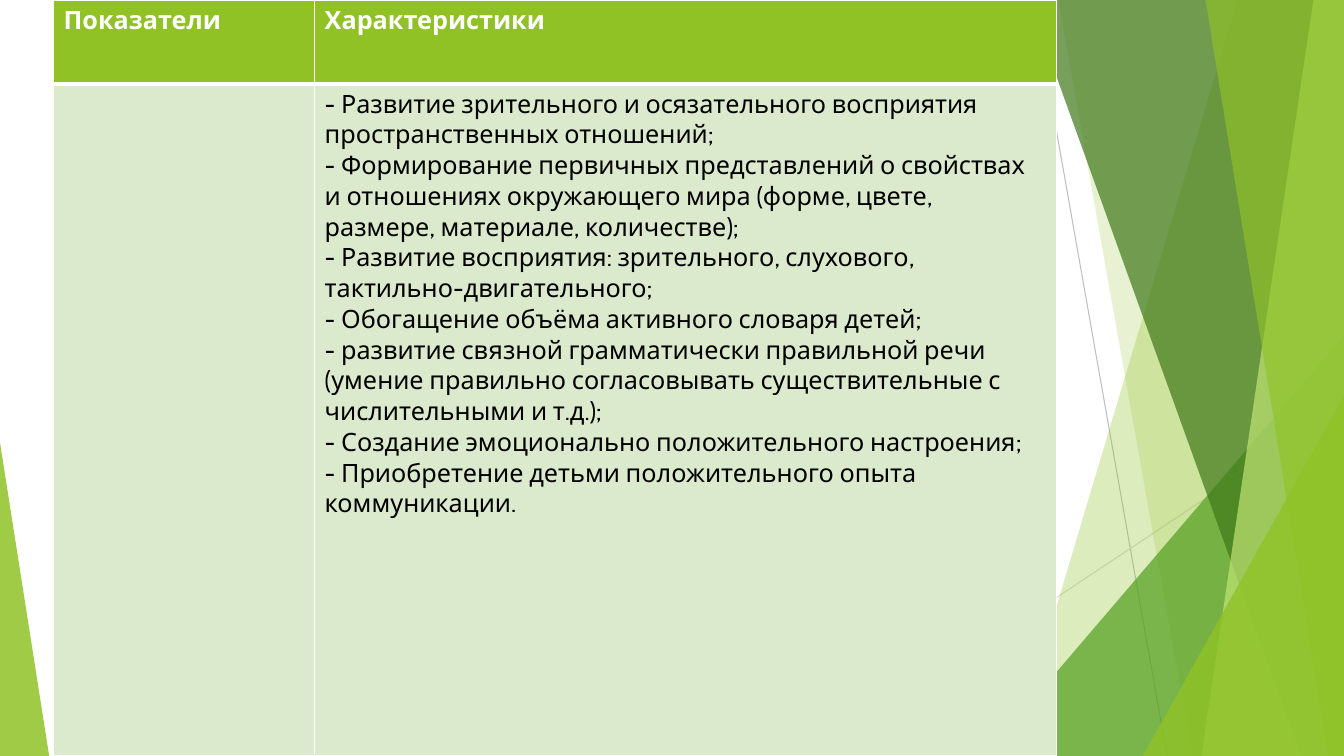
from lxml import etree
from pptx import Presentation
from pptx.dml.color import RGBColor
from pptx.enum.shapes import MSO_CONNECTOR, MSO_SHAPE
from pptx.oxml.ns import qn
from pptx.util import Cm, Pt

HEADERS = ["Показатели", "Характеристики"]
CHARACTERISTICS = [
    "- Развитие зрительного и осязательного восприятия пространственных отношений;",
    "- Формирование первичных представлений о свойствах и отношениях окружающего мира (форме, цвете, размере, материале, количестве);",
    "- Развитие восприятия: зрительного, слухового, тактильно-двигательного;",
    "- Обогащение объёма активного словаря детей;",
    "- развитие связной грамматически правильной речи (умение правильно согласовывать существительные с числительными и т.д.);",
    "- Создание эмоционально положительного настроения;",
    "- Приобретение детьми положительного опыта коммуникации.",
]

STRAIGHT = MSO_CONNECTOR.STRAIGHT
TRIANGLE = MSO_SHAPE.ISOSCELES_TRIANGLE
FONT = "Cabin"
WHITE = RGBColor(0xFF, 0xFF, 0xFF)
BLACK = RGBColor(0, 0, 0)
LIME = RGBColor(0x90, 0xC2, 0x26)
PALE_LIME = RGBColor(0xC0, 0xE4, 0x74)
GREEN = RGBColor(0x54, 0xA0, 0x21)
DARK_GREEN = RGBColor(0x3F, 0x78, 0x19)
PALE_GREEN = RGBColor(0xDB, 0xE9, 0xCD)
GRAY = RGBColor(0xBF, 0xBF, 0xBF)
LIGHT_GRAY = RGBColor(0xD9, 0xD9, 0xD9)

WIDTH, HEIGHT = 33.87, 19.05
COLUMN_WIDTHS = [6.58, 18.69]
ROW_HEIGHTS = [2.11, 16.94]
TABLE_LEFT = 1.35

LINES = [
    (26.04, 0, 29.41, HEIGHT, GRAY),
    (WIDTH, 10.24, 20.62, HEIGHT, LIGHT_GRAY),
]
FACETS = [
    ("band", (31.19, 25.5), LIME, 30),
    ("band", (26.67, 30.05), LIME, 20),
    ("triangle", (24.82, 8.46, 9.05, 1), GREEN, 72),
    ("band", (25.93, 32.79), DARK_GREEN, 70),
    ("band", (33.1, 30.28), PALE_LIME, 70),
    ("band", (30.38, 33.48), LIME, 65),
    ("triangle", (28.8, 9.98, 5.07, 1), LIME, 80),
    ("triangle", (0, 11.15, 1.24, 0), LIME, 85),
]


def add_band(shapes, top_x, bottom_x):
    builder = shapes.build_freeform(Cm(top_x), 0, scale=1.0)
    corners = [(WIDTH, 0), (WIDTH, HEIGHT), (bottom_x, HEIGHT)]
    builder.add_line_segments([(Cm(x), Cm(y)) for x, y in corners], close=True)
    return builder.convert_to_shape()


def add_triangle(shapes, left, top, width, apex):
    shape = shapes.add_shape(TRIANGLE, Cm(left), Cm(top), Cm(width), Cm(HEIGHT - top))
    shape.adjustments[0] = apex
    return shape


def paint(shape, color, opacity):
    shape.shadow.inherit = False
    shape.line.fill.background()
    shape.fill.solid()
    shape.fill.fore_color.rgb = color
    color_element = shape.fill._xPr.find(qn("a:solidFill"))[0]
    etree.SubElement(color_element, qn("a:alpha")).set("val", str(opacity * 1000))


def add_borders(cell, bottom_width):
    properties = cell._tc.get_or_add_tcPr()
    for side in "LRTB":
        width = bottom_width if side == "B" else 1
        border = etree.SubElement(properties, qn("a:ln" + side), w=str(Pt(width)))
        fill = etree.SubElement(border, qn("a:solidFill"))
        etree.SubElement(fill, qn("a:srgbClr"), val=str(WHITE))


def fill_cell(cell, lines, is_header):
    add_borders(cell, 3 if is_header else 1)
    cell.fill.solid()
    cell.fill.fore_color.rgb = LIME if is_header else PALE_GREEN
    cell.text = "\n".join(lines)
    for paragraph in cell.text_frame.paragraphs:
        font = paragraph.font
        font.name = FONT
        font.size = Pt(18)
        font.bold = is_header
        font.color.rgb = WHITE if is_header else BLACK


def add_background(shapes):
    for x1, y1, x2, y2, color in LINES:
        connector = shapes.add_connector(STRAIGHT, Cm(x1), Cm(y1), Cm(x2), Cm(y2))
        connector.line.color.rgb = color
        connector.line.width = Pt(0.75)
        etree.SubElement(connector._element.spPr, qn("a:effectLst"))
    builders = {"band": add_band, "triangle": add_triangle}
    for kind, geometry, color, opacity in FACETS:
        paint(builders[kind](shapes, *geometry), color, opacity)


def add_characteristics_table(shapes):
    rows = [[[header] for header in HEADERS], [[], CHARACTERISTICS]]
    table = shapes.add_table(
        len(rows), len(HEADERS), Cm(TABLE_LEFT), 0,
        Cm(sum(COLUMN_WIDTHS)), Cm(sum(ROW_HEIGHTS)),
    ).table
    for column, width in zip(table.columns, COLUMN_WIDTHS):
        column.width = Cm(width)
    for row_index, row in enumerate(rows):
        table.rows[row_index].height = Cm(ROW_HEIGHTS[row_index])
        for column_index, lines in enumerate(row):
            fill_cell(table.cell(row_index, column_index), lines, row_index == 0)


def main():
    presentation = Presentation()
    presentation.slide_width = Cm(WIDTH)
    presentation.slide_height = Cm(HEIGHT)
    slide = presentation.slides.add_slide(presentation.slide_layouts[6])
    add_background(slide.shapes)
    add_characteristics_table(slide.shapes)
    presentation.save("out.pptx")


if __name__ == "__main__":
    main()
